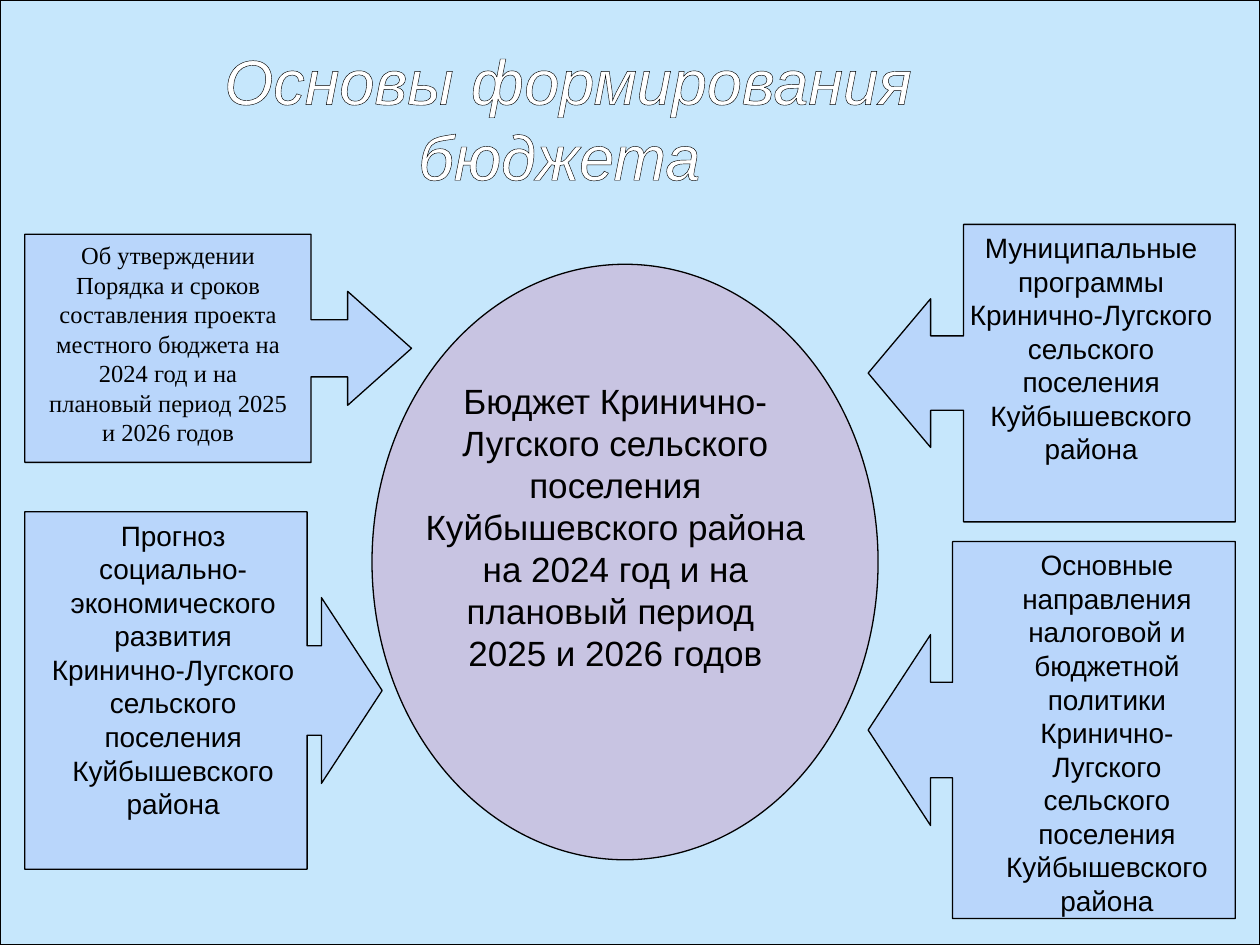
from lxml.etree import SubElement
from pptx import Presentation
from pptx.dml.color import RGBColor
from pptx.enum.shapes import MSO_SHAPE
from pptx.enum.text import MSO_ANCHOR, MSO_AUTO_SIZE, PP_ALIGN
from pptx.oxml.ns import qn
from pptx.util import Pt

SKY = RGBColor(0xC6, 0xE7, 0xFC)
BLUE = RGBColor(0xB9, 0xD6, 0xFB)
LILAC = RGBColor(0xC8, 0xC4, 0xE2)
BLACK = RGBColor(0, 0, 0)
WHITE = RGBColor(0xFF, 0xFF, 0xFF)

RIGHT = MSO_SHAPE.RIGHT_ARROW_CALLOUT
LEFT = MSO_SHAPE.LEFT_ARROW_CALLOUT

SHAPES = [
    (MSO_SHAPE.RECTANGLE, (0, 0, 720, 540), SKY, ()),
    (RIGHT, (14.2, 133.9, 221, 130.3), BLUE, (0.25, 0.25, 0.28, 0.74)),
    (MSO_SHAPE.OVAL, (212.6, 151, 289.2, 340.3), LILAC, ()),
    (LEFT, (496.1, 128.2, 209.8, 170), BLUE, (0.25, 0.25, 0.21, 0.74)),
    (RIGHT, (14.2, 292.5, 204.2, 204.2), BLUE, (0.25, 0.26, 0.17, 0.79)),
    (LEFT, (496.1, 309.5, 209.8, 215.4), BLUE, (0.26, 0.26, 0.17, 0.77)),
]

TEXTS = [
    ("Бюджет Кринично-Лугского сельского поселения Куйбышевского района "
     "на 2024 год и на плановый период  2025 и 2026 годов",
     (235.4, 213.1, 232.6, 175), 20, "Arial"),
    ("Об утверждении Порядка и сроков составления проекта местного бюджета "
     "на 2024 год и на плановый период 2025 и 2026 годов",
     (19.4, 133.9, 153.4, 124.6), 14, "Times New Roman"),
    ("Муниципальные программы Кринично-Лугского сельского поселения "
     "Куйбышевского района",
     (541.4, 128.2, 164.2, 141.8), 16, "Arial"),
    ("Прогноз социально-экономического развития Кринично-Лугского "
     "сельского поселения Куйбышевского района",
     (19.4, 292.5, 159.1, 180.7), 16, "Arial"),
    ("Основные направления налоговой и бюджетной политики "
     "Кринично-Лугского сельского поселения Куйбышевского района",
     (564.5, 309.5, 136.1, 218.9), 16, "Arial"),
]


def points(box):
    return [Pt(v) for v in box]


def set_font(p, name, size, color):
    p.alignment = PP_ALIGN.CENTER
    p.font.name = name
    p.font.size = Pt(size)
    p.font.color.rgb = color


def add_title(s, text, box):
    sp = s.shapes.title
    sp.left, sp.top, sp.width, sp.height = points(box)
    tf = sp.text_frame
    tf.word_wrap = False
    tf.auto_size = MSO_AUTO_SIZE.NONE
    tf.vertical_anchor = MSO_ANCHOR.TOP
    p = tf.paragraphs[0]
    r = p.add_run()
    r.text = text
    set_font(p, "Arial", 36, WHITE)
    p.font.italic = True
    ln = SubElement(r._r.get_or_add_rPr(), qn("a:ln"), w=str(Pt(0.75)))
    fill = SubElement(ln, qn("a:solidFill"))
    SubElement(fill, qn("a:srgbClr"), val=str(BLACK))


def add_outlined(s, kind, box, color, adjustments):
    sp = s.shapes.add_shape(kind, *points(box))
    sp.shadow.inherit = False
    sp.fill.solid()
    sp.fill.fore_color.rgb = color
    sp.line.color.rgb = BLACK
    sp.line.width = Pt(0.75)
    for i, value in enumerate(adjustments):
        sp.adjustments[i] = value


def add_text(s, text, box, size, font):
    tf = s.shapes.add_textbox(*points(box)).text_frame
    tf.word_wrap = True
    tf.auto_size = MSO_AUTO_SIZE.SHAPE_TO_FIT_TEXT
    p = tf.paragraphs[0]
    p.text = text
    set_font(p, font, size, BLACK)


def main():
    prs = Presentation()
    prs.slide_width, prs.slide_height = Pt(720), Pt(540)
    s = prs.slides.add_slide(prs.slide_layouts[5])
    s.background.fill.solid()
    s.background.fill.fore_color.rgb = SKY
    for shape in SHAPES:
        add_outlined(s, *shape)
    for text in TEXTS:
        add_text(s, *text)
    add_title(s, "Основы формирования бюджета ", (36.7, 20.2, 576, 90.7))
    s.shapes._spTree.append(s.shapes.title._element)
    prs.save("out.pptx")


if __name__ == "__main__":
    main()
